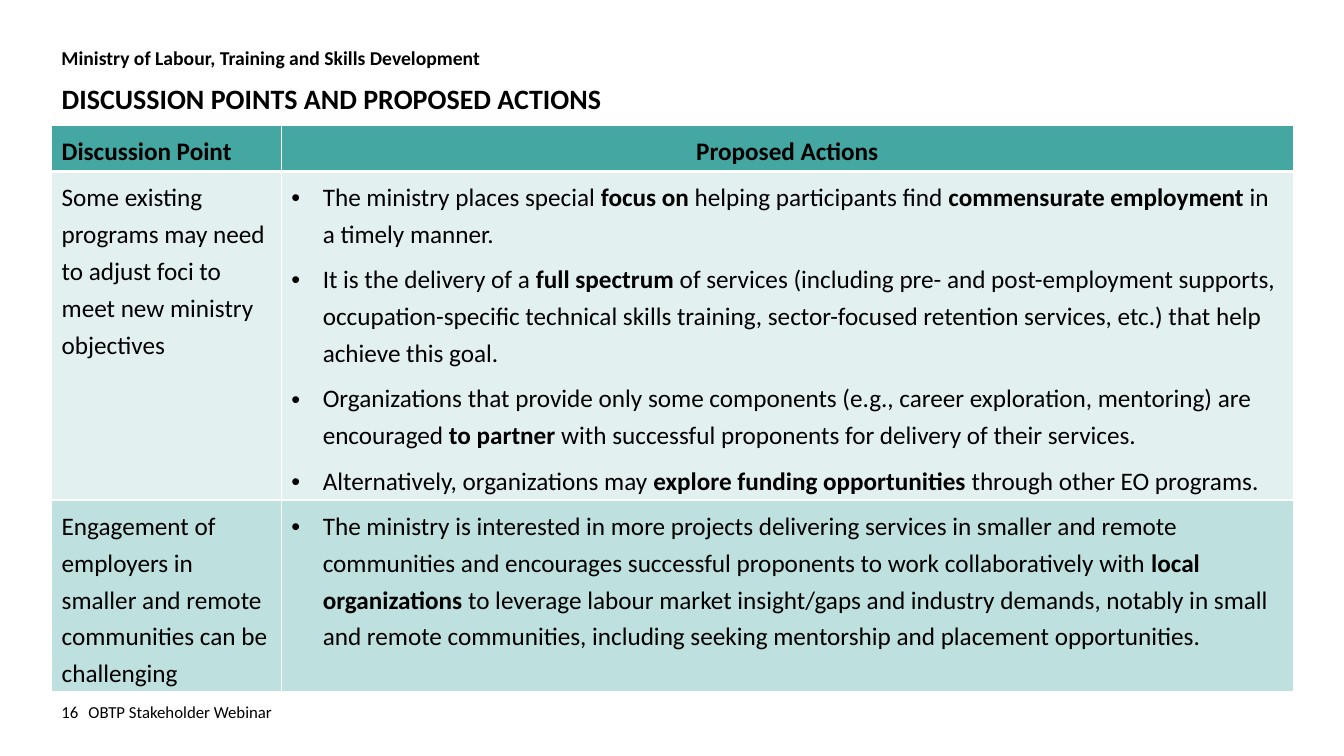
from lxml import etree
from pptx import Presentation
from pptx import util as u
from pptx.dml import color
from pptx.enum import text
from pptx.oxml import ns

COLOURS = {"ink": "000000", "header": "44A7A2", "light": "E2F1F0",
           "medium": "BEE0DE", "border": "FFFFFF"}
LEFT = u.Cm(1.3)
INDENT = u.Cm(0.79)


def write(para, content, size, bold=False):
    """Fill a paragraph; text between ** marks switches weight."""
    for index, part in enumerate(content.split("**")):
        if not part:
            continue
        span = para.add_run()
        span.text = part
        values = {"name": "Calibri", "size": u.Pt(size), "bold": bold or index % 2 == 1}
        for name, value in values.items():
            setattr(span.font, name, value)
        span.font.color.rgb = color.RGBColor.from_string(COLOURS["ink"])


def add_border(cell, side, points):
    line = etree.SubElement(cell._tc.get_or_add_tcPr(), ns.qn(f"a:ln{side}"),
                            w=str(u.Pt(points)))
    fill = etree.SubElement(line, ns.qn("a:solidFill"))
    etree.SubElement(fill, ns.qn("a:srgbClr"), val=COLOURS["border"])


deck = Presentation()
deck.slide_width, deck.slide_height = u.Cm(33.87), u.Cm(19.05)
page = deck.slides.add_slide(deck.slide_layouts[5])

# Title
title = page.shapes.title
place = {"left": LEFT, "top": u.Cm(2.01), "width": u.Cm(28.19), "height": u.Cm(1.73)}
for name, value in place.items():
    setattr(title, name, value)
title.text_frame.vertical_anchor = text.MSO_ANCHOR.TOP
title.text_frame.auto_size = text.MSO_AUTO_SIZE.NONE
para = title.text_frame.paragraphs[0]
para.alignment = text.PP_ALIGN.LEFT
para.line_spacing = 0.9
write(para, "DISCUSSION POINTS AND PROPOSED ACTIONS", 20, bold=True)

# Ministry name, page number and footer
labels = [
    ("Ministry of Labour, Training and Skills Development",
     LEFT, 1.02, 24.71, 0.86, 14, True, text.MSO_ANCHOR.TOP),
    ("16", LEFT, 17.42, 1.9, 1.02, 12, False, text.MSO_ANCHOR.MIDDLE),
    ("OBTP Stakeholder Webinar",
     u.Cm(1.98), 17.42, 10.31, 1.02, 12, False, text.MSO_ANCHOR.MIDDLE),
]
for content, left, top, width, height, size, bold, anchor in labels:
    box = page.shapes.add_textbox(left, u.Cm(top), u.Cm(width), u.Cm(height))
    box.text_frame.word_wrap = True
    box.text_frame.vertical_anchor = anchor
    write(box.text_frame.paragraphs[0], content, size, bold)

# Table content: fill, discussion point, proposed actions
rows = [
    ("header", "Discussion Point", ["Proposed Actions"]),
    ("light",
     "Some existing programs may need to adjust foci to meet new ministry objectives",
     ["The ministry places special **focus on **helping participants find "
      "**commensurate employment **in a timely manner.",
      "It is the delivery of a **full spectrum** of services (including pre- and "
      "post-employment supports, occupation-specific technical skills training, "
      "sector-focused retention services, etc.) that help achieve this goal.",
      "Organizations that provide only some components (e.g., career exploration, "
      "mentoring) are encouraged **to partner **with successful proponents for "
      "delivery of their services.",
      "Alternatively, organizations may **explore funding opportunities** through "
      "other EO programs."]),
    ("medium",
     "Engagement of employers in smaller and remote communities can be challenging",
     ["The ministry is interested in more projects delivering services in smaller "
      "and remote communities and encourages successful proponents to work "
      "collaboratively with **local organizations **to leverage labour market "
      "insight/gaps and industry demands, notably in small and remote communities, "
      "including seeking mentorship and placement opportunities."]),
]

# Table
table = page.shapes.add_table(len(rows), 2, LEFT, u.Cm(3.15),
                              u.Cm(31.29), u.Cm(13.72)).table
for column, width in zip(table.columns, (5.79, 25.5)):
    column.width = u.Cm(width)
for row, height in zip(table.rows, (1.02, 8.28, 4.42)):
    row.height = u.Cm(height)

for row_index, (fill, point, actions) in enumerate(rows):
    is_header = row_index == 0
    for column_index, contents in enumerate(([point], actions)):
        cell = table.cell(row_index, column_index)
        for side in "LRTB":
            under_header = (row_index, side) in ((0, "B"), (1, "T"))
            add_border(cell, side, 3 if under_header else 1)
        cell.fill.solid()
        cell.fill.fore_color.rgb = color.RGBColor.from_string(COLOURS[fill])
        frame = cell.text_frame
        for index, content in enumerate(contents):
            para = frame.add_paragraph() if index else frame.paragraphs[0]
            para.line_spacing = 1.2
            para.space_after = u.Pt(6)
            if column_index == 1 and is_header:
                para.alignment = text.PP_ALIGN.CENTER
            elif column_index == 1:
                properties = para._p.get_or_add_pPr()
                properties.set("marL", str(INDENT))
                properties.set("indent", str(-INDENT))
                etree.SubElement(properties, ns.qn("a:buFont"), typeface="Arial")
                etree.SubElement(properties, ns.qn("a:buChar"), char="•")
            write(para, content, 18, bold=is_header)

deck.save("out.pptx")
